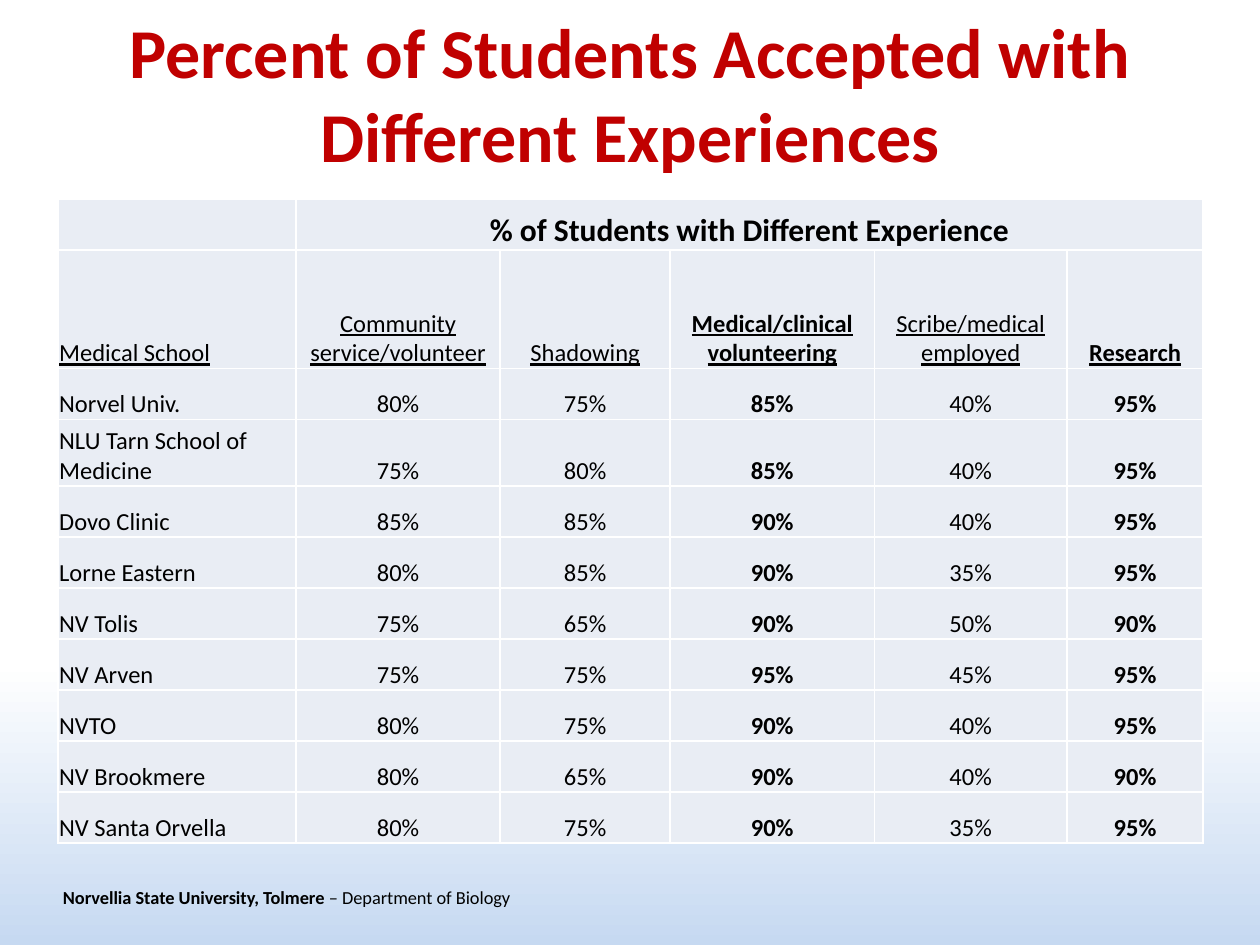
from lxml import etree
from pptx import Presentation
from pptx import util as u
from pptx.dml.color import RGBColor
from pptx.enum import text
from pptx.oxml import ns

WHITE = RGBColor(0xFF, 0xFF, 0xFF)
SKY = RGBColor(0xC6, 0xD9, 0xF1)
RED = RGBColor(0xC0, 0x00, 0x00)
BLACK = RGBColor(0x00, 0x00, 0x00)
PALE = RGBColor(0xE9, 0xED, 0xF4)
FONT = "Calibri"

COLUMN_WIDTHS = [1.89, 1.62, 1.35, 1.62, 1.53, 1.08]
HEADER_HEIGHT = 0.94
TALL_HEIGHT = 0.53
TALL_SCHOOL = "NLU Tarn School of Medicine"
BOLD_COLUMNS = (3, 5)
GROUP_HEADING = "% of Students with Different Experience"
HEADINGS = [
    "Medical School", "Community service/volunteer", "Shadowing",
    "Medical/clinical volunteering", "Scribe/medical employed", "Research",
]
SCHOOLS = [
    ("Norvel Univ.", 80, 75, 85, 40, 95),
    (TALL_SCHOOL, 75, 80, 85, 40, 95),
    ("Dovo Clinic", 85, 85, 90, 40, 95),
    ("Lorne Eastern", 80, 85, 90, 35, 95),
    ("NV Tolis", 75, 65, 90, 50, 90),
    ("NV Arven", 75, 75, 95, 45, 95),
    ("NVTO", 80, 75, 90, 40, 95),
    ("NV Brookmere", 80, 65, 90, 40, 90),
    ("NV Santa Orvella", 80, 75, 90, 35, 95),
]


def format_span(span, size, color=BLACK, bold=False, underline=False):
    """Set the font of one run."""
    span.font.name = FONT
    span.font.size = u.Pt(size)
    span.font.color.rgb = color
    span.font.bold = bold
    span.font.underline = underline


def add_text_frame(page, left, top, width, height, side_margin, anchor):
    """Add a wrapping text box and return its frame."""
    box = page.shapes.add_textbox(*map(u.Inches, (left, top, width, height)))
    frame = box.text_frame
    frame.word_wrap = True
    frame.vertical_anchor = anchor
    frame.margin_left = frame.margin_right = u.Inches(side_margin)
    return frame


def paint_background(page):
    """Fade the page from white to sky blue at the bottom."""
    fill = page.background.fill
    fill.gradient()
    fill.gradient_angle = 270
    for stop, position, color in zip(fill.gradient_stops, (0.7, 1), (WHITE, SKY)):
        stop.position = position
        stop.color.rgb = color


def add_title(page, left, top, width, height):
    """Place the slide title."""
    frame = add_text_frame(page, left, top, width, height, 0.1, text.MSO_ANCHOR.TOP)
    para = frame.paragraphs[0]
    para.text = "Percent of Students Accepted with Different Experiences"
    para.alignment = text.PP_ALIGN.CENTER
    format_span(para.runs[0], 40, RED, bold=True)


def add_footer(page, left, top, width, height):
    """Place the department line."""
    frame = add_text_frame(page, left, top, width, height, 0, text.MSO_ANCHOR.MIDDLE)
    para = frame.paragraphs[0]
    for words, bold in (("Norvellia State University, Tolmere ", True),
                        ("– Department of Biology", False)):
        span = para.add_run()
        span.text = words
        format_span(span, 10.5, bold=bold)


def style_cell(cell):
    """Give a cell white borders, a pale fill and tight margins."""
    properties = cell._tc.get_or_add_tcPr()
    for side in ("a:lnL", "a:lnR", "a:lnT", "a:lnB"):
        line = etree.SubElement(properties, ns.qn(side), w=str(u.Pt(1)))
        paint = etree.SubElement(line, ns.qn("a:solidFill"))
        etree.SubElement(paint, ns.qn("a:srgbClr"), val=str(WHITE))
    cell.fill.solid()
    cell.fill.fore_color.rgb = PALE
    cell.vertical_anchor = text.MSO_ANCHOR.BOTTOM
    cell.margin_left = cell.margin_right = cell.margin_top = u.Inches(0.01)
    cell.margin_bottom = 0


def write_cell(cell, words, size=14, bold=False, underline=False, centred=True):
    """Write one formatted line into a cell."""
    cell.text_frame.text = words
    para = cell.text_frame.paragraphs[0]
    para.alignment = text.PP_ALIGN.CENTER if centred else text.PP_ALIGN.LEFT
    format_span(para.runs[0], size, bold=bold, underline=underline)


def add_experience_table(page, left, top, width, height):
    """Place the table of schools and experience percentages."""
    rows = [HEADINGS] + [[name, *(f"{value}%" for value in values)]
                         for name, *values in SCHOOLS]
    table = page.shapes.add_table(len(rows) + 1, len(HEADINGS),
                                  *map(u.Inches, (left, top, width, height))).table
    table.first_row = table.horz_banding = False
    for column, column_width in zip(table.columns, COLUMN_WIDTHS):
        column.width = u.Inches(column_width)

    special = {HEADINGS[0]: HEADER_HEIGHT, TALL_SCHOOL: TALL_HEIGHT}
    plain = (height - sum(special.values())) / (len(rows) + 1 - len(special))
    table.rows[0].height = u.Inches(plain)
    for cell in table.iter_cells():
        style_cell(cell)

    table.cell(0, 1).merge(table.cell(0, len(HEADINGS) - 1))
    write_cell(table.cell(0, 1), GROUP_HEADING, size=18, bold=True)
    for number, row in enumerate(rows, start=1):
        table.rows[number].height = u.Inches(special.get(row[0], plain))
        for column, words in enumerate(row):
            write_cell(table.cell(number, column), words,
                       bold=column in BOLD_COLUMNS,
                       underline=number == 1, centred=column > 0)


def main():
    """Build the slide and save the deck."""
    deck = Presentation()
    deck.slide_width, deck.slide_height = u.Inches(10), u.Inches(7.5)
    page = deck.slides.add_slide(deck.slide_layouts[6])
    paint_background(page)
    add_footer(page, 0.5, 6.92, 5.17, 0.4)
    add_title(page, 0, 0.02, 10, 1.56)
    add_experience_table(page, 0.46, 1.58, 9.08, 5.11)
    deck.save("out.pptx")


if __name__ == "__main__":
    main()
